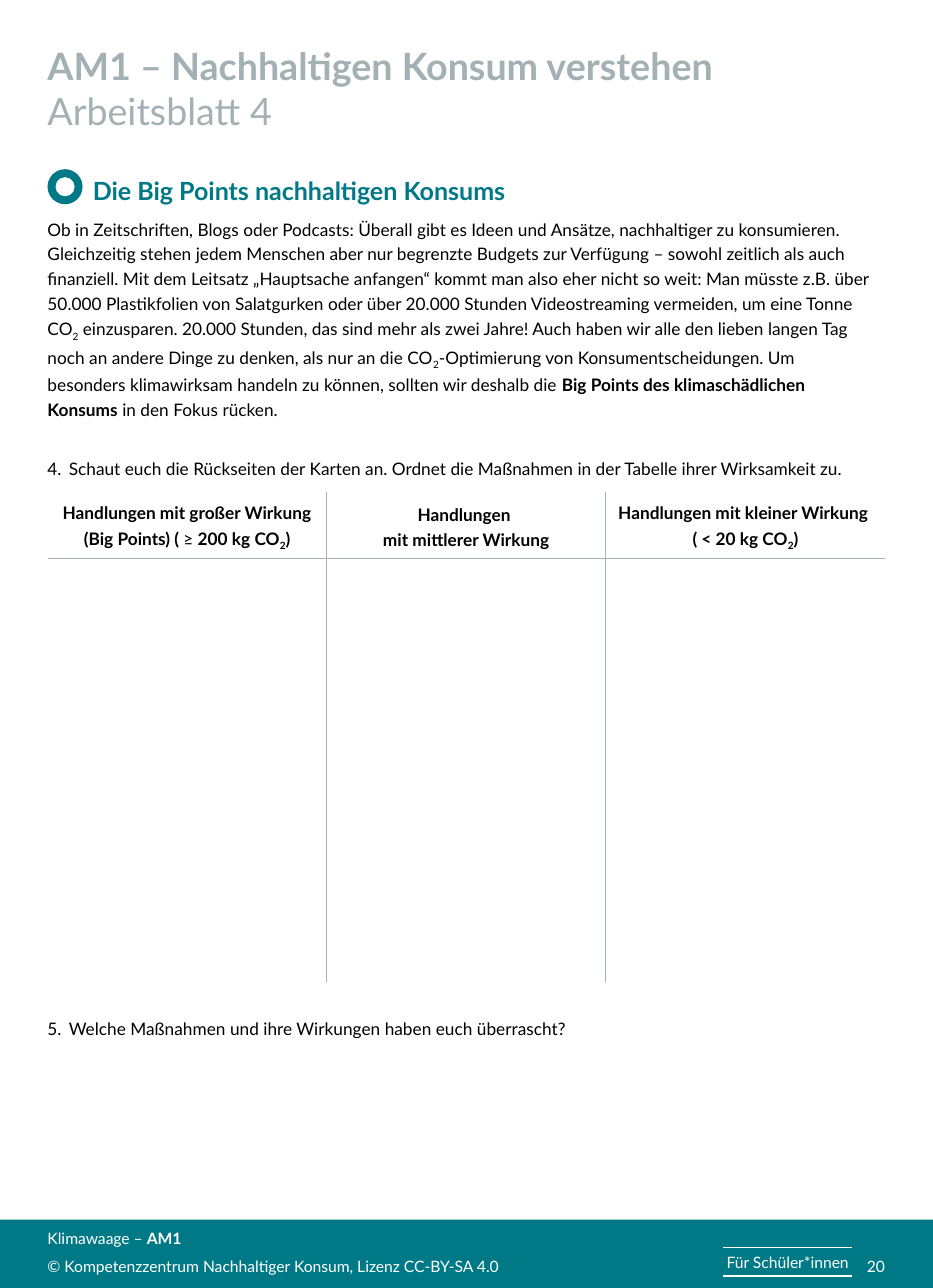
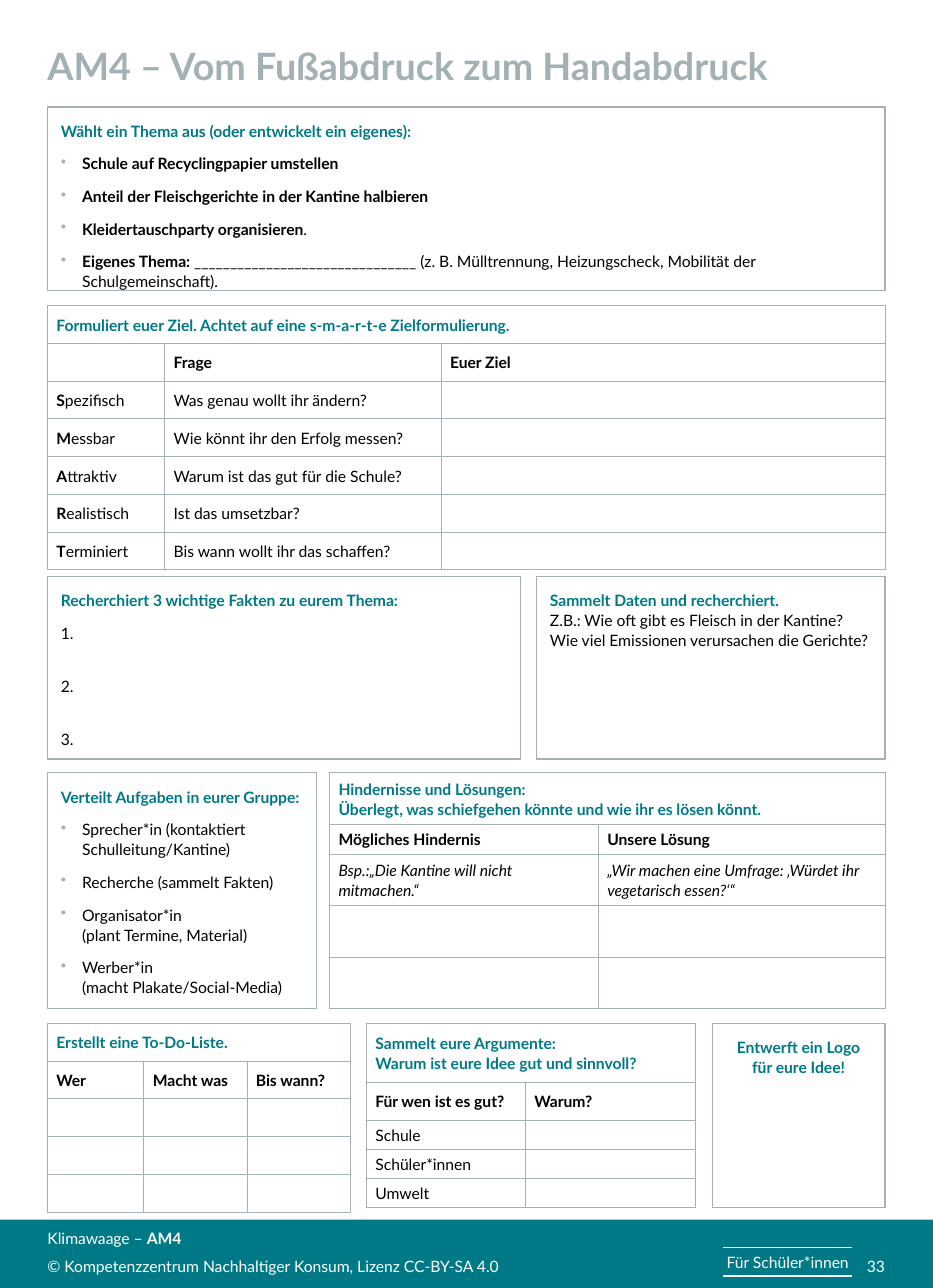
from copy import deepcopy

from lxml import etree
from pptx import Presentation
from pptx.dml.color import RGBColor
from pptx.enum.shapes import MSO_CONNECTOR, MSO_SHAPE
from pptx.enum.text import MSO_ANCHOR, PP_ALIGN
from pptx.oxml.ns import qn
from pptx.util import Cm, Pt

TEAL = RGBColor(0x00, 0x79, 0x87)
GREY = RGBColor(0xA3, 0xB1, 0xB5)
BLACK = RGBColor(0x00, 0x00, 0x00)
WHITE = RGBColor(0xFF, 0xFF, 0xFF)

LEFT, CENTER, RIGHT = PP_ALIGN.LEFT, PP_ALIGN.CENTER, PP_ALIGN.RIGHT
TOP, MIDDLE, BOTTOM = MSO_ANCHOR.TOP, MSO_ANCHOR.MIDDLE, MSO_ANCHOR.BOTTOM
RECTANGLE, OVAL = MSO_SHAPE.RECTANGLE, MSO_SHAPE.OVAL
STRAIGHT = MSO_CONNECTOR.STRAIGHT

# Run styles
PLAIN = {}
BOLD = {"bold": True}
ITALIC = {"italic": True}
SUB = {"baseline": "-25000"}
BOLD_SUB = {**BOLD, **SUB}
HEAD = {"bold": True, "color": TEAL}
LIGHT = {"color": WHITE}
LIGHT_BOLD = {"color": WHITE, "bold": True}

# Page measures in cm
PAGE_W, PAGE_H = 21.0, 29.0
MARGIN, CONTENT_W = 1.07, 18.85
BAND_Y, FOOTER_BOTTOM = 27.46, 28.73


def child(parent, tag, **attributes):
    return etree.SubElement(parent, qn(tag), attributes)


def colour_fill(parent, colour):
    child(child(parent, "a:solidFill"), "a:srgbClr", val=str(colour))


class Worksheet:
    font = "Lato"
    line_width = Pt(0.75)

    def __init__(self):
        self.deck = Presentation()
        self.deck.slide_width, self.deck.slide_height = Cm(PAGE_W), Cm(PAGE_H)
        self.slide = None

    # Text
    def run(self, paragraph, text, size, color=BLACK, bold=False, italic=False, baseline=None):
        for index, line in enumerate(text.split("\n")):
            if index:
                paragraph.add_line_break()
                paragraph._p[-1].append(deepcopy(run._r.rPr))
            run = paragraph.add_run()
            run.text = line
            font = run.font
            font.name, font.size, font.bold, font.italic = self.font, Pt(size), bold, italic
            font.color.rgb = color
            if baseline:
                run._r.rPr.set("baseline", baseline)

    def paragraph(self, paragraph, runs, size=10, align=LEFT, spacing=1.0, before=0, after=0,
                  indent=0, bullet=False, number=None):
        paragraph.alignment = align
        paragraph.line_spacing = spacing
        paragraph.space_before, paragraph.space_after = Pt(before), Pt(after)
        properties = paragraph._p.get_or_add_pPr()
        hanging = bullet or number
        properties.set("marL", str(Cm(0.48 if hanging else indent)))
        properties.set("indent", str(-Cm(0.48) if hanging else 0))
        if bullet:
            child(child(properties, "a:buClr"), "a:srgbClr", val=str(GREY))
            child(properties, "a:buChar", char="•")
        elif number:
            child(properties, "a:buAutoNum", type="arabicPeriod", startAt=str(number))
        else:
            child(properties, "a:buNone")
        for text, style in runs:
            self.run(paragraph, text, size, **style)

    def fill_frame(self, frame, paragraphs, anchor=TOP, inset=0):
        frame.word_wrap = True
        frame.vertical_anchor = anchor
        frame.margin_left = frame.margin_right = Cm(inset)
        frame.margin_top = frame.margin_bottom = Cm(inset)
        for index, (runs, options) in enumerate(paragraphs):
            target = frame.add_paragraph() if index else frame.paragraphs[0]
            self.paragraph(target, runs, **options)

    def text(self, x, y, w, h, paragraphs, anchor=TOP):
        box = self.slide.shapes.add_textbox(Cm(x), Cm(y), Cm(w), Cm(h))
        self.fill_frame(box.text_frame, paragraphs, anchor)

    # Shapes and lines
    def shape(self, kind, x, y, w, h, fill, line=None):
        shape = self.slide.shapes.add_shape(kind, Cm(x), Cm(y), Cm(w), Cm(h))
        shape.shadow.inherit = False
        shape.fill.solid()
        shape.fill.fore_color.rgb = fill
        if line is None:
            shape.line.fill.background()
        else:
            shape.line.color.rgb = line
            shape.line.width = self.line_width
        return shape

    def box(self, x, y, w, h, title, items=(), align=LEFT):
        """Framed box: title runs, then (runs, options) items."""
        common = {"spacing": 1.07, "after": 8, "align": align}
        paragraphs = [(title, common)]
        paragraphs += [(runs, {**common, **options}) for runs, options in items]
        frame = self.shape(RECTANGLE, x, y, w, h, WHITE, GREY).text_frame
        self.fill_frame(frame, paragraphs, inset=0.3)

    def line(self, x1, y1, x2, y2, colour):
        line = self.slide.shapes.add_connector(STRAIGHT, Cm(x1), Cm(y1), Cm(x2), Cm(y2))
        line.line.color.rgb = colour
        line.line.width = self.line_width
        child(line._element.spPr, "a:effectLst")

    # Tables
    def borders(self, cell, sides):
        properties = cell._tc.get_or_add_tcPr()
        for position, side in enumerate("LRTB"):
            edge = etree.Element(qn("a:ln" + side), w=str(self.line_width))
            if side in sides:
                colour_fill(edge, GREY)
            else:
                child(edge, "a:noFill")
            properties.insert(position, edge)

    def table(self, x, y, columns, heights, rows, title=None, grid=True,
              pad=(0.2, 0.1), **options):
        """Missing rows stay empty; a title spans the first row."""
        count = len(columns)
        if title:
            rows = [[title] + [[]] * (count - 1)] + rows
        rows = rows + [[[]] * count] * (len(heights) - len(rows))
        table = self.slide.shapes.add_table(
            len(heights), count, Cm(x), Cm(y), Cm(sum(columns)), Cm(sum(heights))).table
        table.first_row = table.horz_banding = False
        for column, width in zip(table.columns, columns):
            column.width = Cm(width)
        for r, (row, height) in enumerate(zip(rows, heights)):
            table.rows[r].height = Cm(height)
            for c, runs in enumerate(row):
                cell = table.cell(r, c)
                cell.margin_left = cell.margin_right = Cm(pad[0])
                cell.margin_top = cell.margin_bottom = Cm(pad[1])
                cell.vertical_anchor = MIDDLE
                cell.fill.solid()
                cell.fill.fore_color.rgb = WHITE
                inner = "L" * (c > 0) + "R" * (c < count - 1) + ("B" if r == 0 else "T" * (r == 1))
                self.borders(cell, "LRTB" if grid else inner)
                paragraph = cell.text_frame.paragraphs[0]
                if runs:
                    self.paragraph(paragraph, runs, **options)
                else:
                    child(paragraph._p, "a:endParaRPr", sz="1000")
        if title:
            table.cell(0, 0).merge(table.cell(0, count - 1))

    # Shared page frame
    def page(self, title, module, number):
        self.slide = self.deck.slides.add_slide(self.deck.slide_layouts[6])
        self.shape(RECTANGLE, 0, BAND_Y, PAGE_W, PAGE_H - BAND_Y, TEAL)
        self.text(MARGIN, 0.97, CONTENT_W, 1.2 * len(title), [(title, {"size": 24})])
        footer_h = FOOTER_BOTTOM - BAND_Y
        self.text(MARGIN, BAND_Y, 15.44, footer_h, [
            ([("Klimawaage – ", LIGHT), (module, LIGHT_BOLD)], {"after": 6}),
            ([("© Kompetenzzentrum Nachhaltiger Konsum, Lizenz CC-BY-SA 4.0", LIGHT)], {"after": 6}),
        ], BOTTOM)
        self.text(19.2, BAND_Y, MARGIN + CONTENT_W - 19.2, footer_h,
                  [([(number, LIGHT)], {"align": RIGHT})], BOTTOM)
        label_y = 28.09
        self.text(16.03, label_y, 3.4, FOOTER_BOTTOM - label_y,
                  [([("Für Schüler*innen", LIGHT)], {"align": CENTER})], MIDDLE)
        for y in (label_y, FOOTER_BOTTOM):
            self.line(16.28, y, 19.18, y, WHITE)


def big_points(sheet):
    sheet.page([("AM1 – Nachhaltigen Konsum verstehen ", {"color": GREY, "bold": True}),
                ("Arbeitsblatt 4", {"color": GREY})], "AM1", "20")

    # Introduction and tasks
    body = {"size": 11, "spacing": 1.2, "after": 6}
    intro = [
        ("Ob in Zeitschriften, Blogs oder Podcasts: Überall gibt es Ideen und Ansätze, nachhaltiger "
         "zu konsumieren. Gleichzeitig stehen jedem Menschen aber nur begrenzte Budgets zur Verfügung "
         "– sowohl zeitlich als auch finanziell. Mit dem Leitsatz „Hauptsache anfangen“ kommt man also "
         "eher nicht so weit: Man müsste z.B. über 50.000 Plastikfolien von Salatgurken oder über "
         "20.000 Stunden Videostreaming vermeiden, um eine Tonne CO", PLAIN),
        ("2", SUB),
        (" einzusparen. 20.000 Stunden, das sind mehr als zwei Jahre! Auch haben wir alle den lieben "
         "langen Tag noch an andere Dinge zu denken, als nur an die CO", PLAIN),
        ("2", SUB),
        ("-Optimierung von Konsumentscheidungen. Um besonders klimawirksam handeln zu können, "
         "sollten wir deshalb die ", PLAIN),
        ("Big Points des klimaschädlichen Konsums", BOLD),
        (" in den Fokus rücken.", PLAIN),
    ]
    sheet.text(MARGIN, 3.81, 18.6, 7.1, [
        ([("Die Big Points nachhaltigen Konsums", HEAD)], {**body, "size": 16, "indent": 1.02}),
        (intro, body),
        ([("Schaut euch die Rückseiten der Karten an. Ordnet die Maßnahmen in der Tabelle ihrer "
           "Wirksamkeit zu.", PLAIN)], {**body, "before": 16, "number": 4}),
    ])
    sheet.text(MARGIN, 22.83, 18.6, 0.6, [
        ([("Welche Maßnahmen und ihre Wirkungen haben euch überrascht?", PLAIN)],
         {**body, "number": 5})])

    # Effect table
    headings = [
        [("Handlungen mit großer Wirkung (Big Points) ( ", BOLD), ("≥", PLAIN),
         (" 200 kg CO", BOLD), ("2", BOLD_SUB), (")", BOLD)],
        [("Handlungen \nmit mittlerer Wirkung", BOLD)],
        [("Handlungen mit kleiner Wirkung \n( < 20 kg CO", BOLD), ("2", BOLD_SUB), (")", BOLD)],
    ]
    sheet.table(MARGIN, 11.07, [CONTENT_W / 3] * 3, [1.5] + [0.94] * 5 + [4.83], [headings],
                grid=False, pad=(0.1, 0.05), size=11, spacing=1.2, align=CENTER)

    # Ring beside the heading
    ring, hole = 0.79, 0.43
    inset = (ring - hole) / 2
    sheet.shape(OVAL, MARGIN, 3.81, ring, ring, TEAL)
    sheet.shape(OVAL, MARGIN + inset, 3.81 + inset, hole, hole, WHITE)


def handprint(sheet):
    sheet.page([("AM4 – Vom Fußabdruck zum Handabdruck", {"color": GREY, "bold": True})],
               "AM4", "33")
    bullet = {"bullet": True}

    # Topic
    sheet.box(MARGIN, 2.41, CONTENT_W, 4.14,
              [("Wählt ein Thema aus (oder entwickelt ein eigenes):", HEAD)], [
        ([("Schule auf Recyclingpapier umstellen", BOLD)], bullet),
        ([("Anteil der Fleischgerichte in der Kantine halbieren", BOLD)], bullet),
        ([("Kleidertauschparty organisieren", BOLD), (".", PLAIN)], bullet),
        ([("Eigenes Thema:", BOLD),
          (" _______________________________ (z. B. Mülltrennung, Heizungscheck, Mobilität der "
           "Schulgemeinschaft).", PLAIN)], bullet),
    ])

    # SMART goal
    questions = [
        ("Spezifisch", "Was genau wollt ihr ändern?"),
        ("Messbar", "Wie könnt ihr den Erfolg messen?"),
        ("Attraktiv", "Warum ist das gut für die Schule?"),
        ("Realistisch", "Ist das umsetzbar?"),
        ("Terminiert", "Bis wann wollt ihr das schaffen?"),
    ]
    goal_rows = [[[], [("Frage", BOLD)], [("Euer Ziel", BOLD)]]]
    goal_rows += [[[(word[0], BOLD), (word[1:], PLAIN)], [(question, PLAIN)], []]
                  for word, question in questions]
    sheet.table(MARGIN, 6.88, [2.64, 6.22, 9.99], [0.85] * 7, goal_rows, spacing=1.07,
                title=[("Formuliert euer Ziel. Achtet auf eine s-m-a-r-t-e Zielformulierung.", HEAD)])

    # Facts and data
    sheet.box(MARGIN, 12.98, 10.64, 4.11,
              [("Recherchiert 3 wichtige Fakten zu eurem Thema:", HEAD)],
              [([(f"{fact}.", PLAIN)], {"after": 21}) for fact in (1, 2, 3)])
    sheet.box(12.08, 12.98, 7.84, 4.11, [
        ("Sammelt Daten und recherchiert. \n", HEAD),
        ("Z.B.: Wie oft gibt es Fleisch in der Kantine? Wie viel Emissionen verursachen die "
         "Gerichte?", PLAIN)])

    # Group tasks
    duties = ["Sprecher*in (kontaktiert Schulleitung/Kantine)", "Recherche (sammelt Fakten)",
              "Organisator*in \n(plant Termine, Material)",
              "Werber*in \n(macht Plakate/Social-Media)"]
    sheet.box(MARGIN, 17.4, 6.05, 5.31, [("Verteilt Aufgaben in eurer Gruppe:", HEAD)],
              [([(duty, PLAIN)], bullet) for duty in duties])

    # Obstacles
    sheet.table(7.42, 17.4, [6.05, 6.45], [1.16, 0.67, 1.16, 1.16, 1.16], [
        [[("Mögliches Hindernis", BOLD)], [("Unsere Lösung", BOLD)]],
        [[("Bsp.:„Die Kantine will nicht mitmachen.“", ITALIC)],
         [("„Wir machen eine Umfrage: ‚Würdet ihr vegetarisch essen?‘“", ITALIC)]],
    ], spacing=1.07, title=[("Hindernisse und Lösungen: \nÜberlegt, was schiefgehen könnte und wie "
                             "ihr es lösen könnt.", HEAD)])

    # To-do list, arguments and logo
    bottom_y = 23.04
    sheet.table(MARGIN, bottom_y, [2.17, 2.32, 2.32], [0.85] * 5,
                [[[(name, BOLD)] for name in ("Wer", "Macht was", "Bis wann?")]],
                spacing=1.07, title=[("Erstellt eine To-Do-Liste.", HEAD)])
    argument_rows = [[[("Für wen ist es gut?", BOLD)], [("Warum?", BOLD)]]]
    argument_rows += [[[(group, PLAIN)], []] for group in ("Schule", "Schüler*innen", "Umwelt")]
    sheet.table(8.25, bottom_y, [3.58, 3.83], [1.33, 0.85, 0.65, 0.65, 0.65], argument_rows,
                spacing=1.07, title=[("Sammelt eure Argumente: \nWarum ist eure Idee gut und "
                                      "sinnvoll?", HEAD)])
    sheet.box(16.03, bottom_y, 3.89, 4.14, [("Entwerft ein Logo für eure Idee!", HEAD)],
              align=CENTER)


def main():
    sheet = Worksheet()
    big_points(sheet)
    handprint(sheet)
    sheet.deck.save("out.pptx")


if __name__ == "__main__":
    main()
